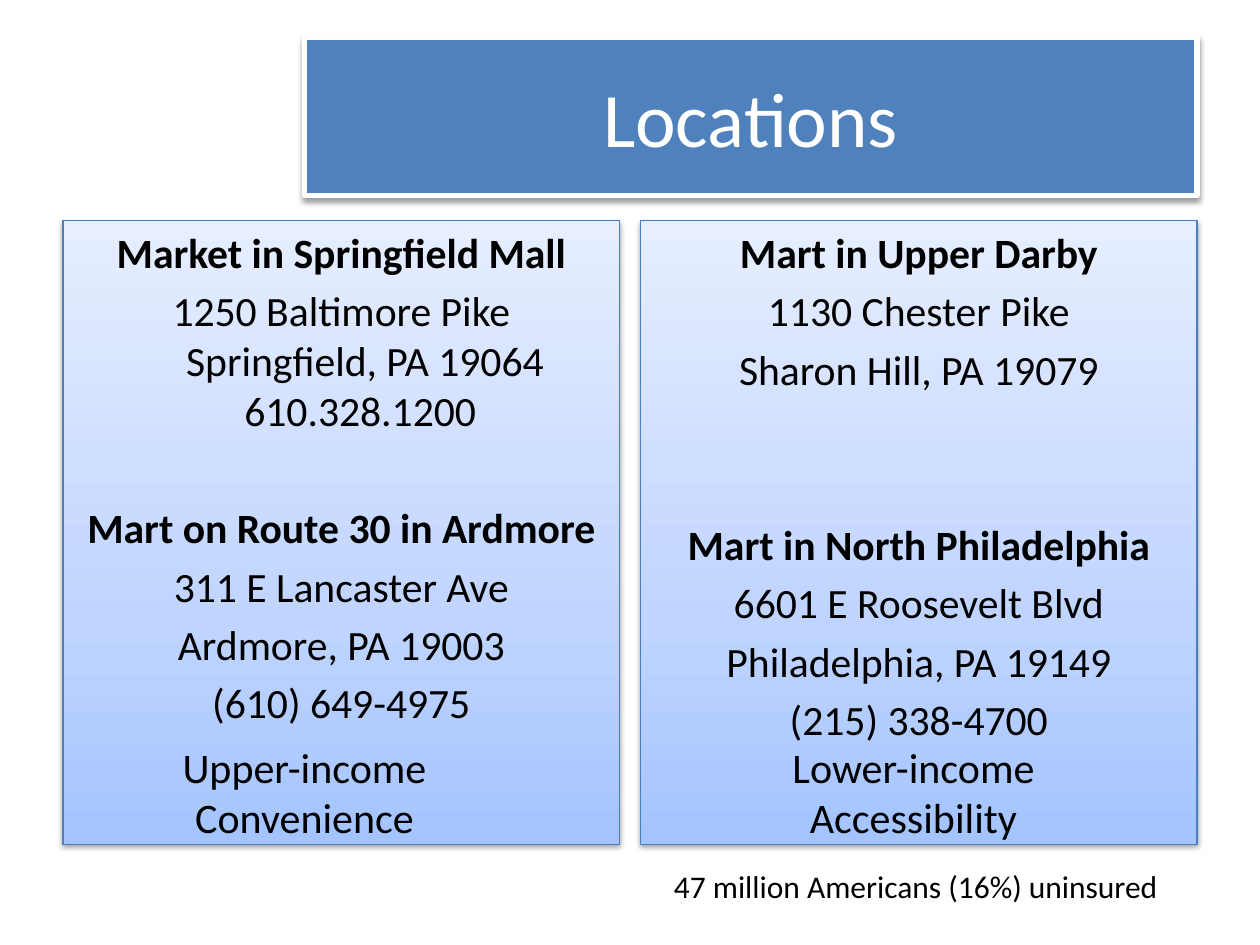
from copy import deepcopy

from lxml import etree
from pptx import Presentation
from pptx.dml.color import RGBColor
from pptx.enum.text import MSO_ANCHOR, MSO_AUTO_SIZE, PP_ALIGN
from pptx.oxml.ns import qn
from pptx.util import Pt

CENTER, LEFT = PP_ALIGN.CENTER, PP_ALIGN.LEFT
TWO_CONTENT = 3
FONT = "Calibri"
BLACK, WHITE, BLUE, EDGE = "000000", "FFFFFF", "4F81BD", "4B7EBC"
PANEL_STOPS = [(0, "A4C4FF"), (0.35, "BFD4FF"), (1, "E6EEFF")]

# Content: each location is a heading and its address paragraphs
TITLE = "Locations"
COLUMNS = [
    {
        "locations": [
            ("Market in Springfield Mall",
             ["1250 Baltimore Pike\vSpringfield, PA 19064\v610.328.1200 "]),
            ("Mart on Route 30 in Ardmore",
             ["311 E Lancaster Ave", "Ardmore, PA 19003", "(610) 649-4975"]),
        ],
        "gap": 38.2,
        "audience": ["Upper-income", "Convenience"],
        "audience_left": 60,
    },
    {
        "locations": [
            ("Mart in Upper Darby",
             ["1130 Chester Pike", "Sharon Hill, PA 19079"]),
            ("Mart in North Philadelphia",
             ["6601 E Roosevelt Blvd", "Philadelphia, PA 19149", "(215) 338-4700"]),
        ],
        "gap": 71.6,
        "audience": ["Lower-income", "Accessibility"],
        "audience_left": 408,
    },
]
FOOTNOTE = "47 million Americans (16%) uninsured"

# Layout in points
PANEL_LEFT, PANEL_TOP, PANEL_WIDTH, PANEL_HEIGHT = 36, 126, 318, 356.4
PANEL_STEP = 330
LINE_GAP = 4.8
HANGING = 27


def rgb(color):
    return RGBColor.from_string(color)


def place(shape, left, top, width, height):
    shape.left, shape.top = Pt(left), Pt(top)
    shape.width, shape.height = Pt(width), Pt(height)


def style(paragraph, size, color=BLACK, bold=False, align=CENTER):
    paragraph.alignment = align
    for run in paragraph.runs:
        font = run.font
        font.name, font.size, font.bold = FONT, Pt(size), bold
        font.color.rgb = rgb(color)
    # Line breaks keep the size of their text
    for line_break in paragraph._p.findall(qn("a:br")):
        line_break.append(deepcopy(paragraph.runs[0]._r.rPr))


def outline(shape, color, width):
    shape.line.color.rgb = rgb(color)
    shape.line.width = Pt(width)


def add_shadow(shape):
    effects = etree.SubElement(shape._element.spPr, qn("a:effectLst"))
    shadow = etree.SubElement(
        effects, qn("a:outerShdw"), blurRad=str(Pt(3.1)), dist=str(Pt(1.6)),
        dir="5400000", rotWithShape="0")
    color = etree.SubElement(shadow, qn("a:srgbClr"), val=BLACK)
    etree.SubElement(color, qn("a:alpha"), val="38000")


def fill_gradient(shape):
    shape.fill.gradient()
    shape.fill.gradient_angle = 90
    stop_list = shape._element.spPr.find(".//" + qn("a:gsLst"))
    stop_list.append(deepcopy(stop_list[0]))
    for stop, (position, color) in zip(shape.fill.gradient_stops, PANEL_STOPS):
        stop.position = position
        stop.color.rgb = rgb(color)


def hang_without_bullet(paragraph):
    properties = paragraph._p.get_or_add_pPr()
    properties.set("marL", str(Pt(HANGING)))
    properties.set("indent", str(-Pt(HANGING)))
    etree.SubElement(properties, qn("a:buNone"))


def fill_panel(panel, column):
    frame = panel.text_frame
    frame.auto_size = MSO_AUTO_SIZE.NONE
    lines = []
    for number, (heading, address) in enumerate(column["locations"]):
        lines.append((heading, True, column["gap"] if number else 0))
        lines += [(text, False, LINE_GAP) for text in address]
    for number, (text, bold, space) in enumerate(lines):
        paragraph = frame.add_paragraph() if number else frame.paragraphs[0]
        paragraph.text = text
        paragraph.space_before = Pt(space)
        hang_without_bullet(paragraph)
        style(paragraph, 23.8, bold=bold)


def add_note(slide, text, size, left, top, width, height, align=CENTER):
    note = slide.shapes.add_textbox(Pt(left), Pt(top), Pt(width), Pt(height))
    note.text_frame.word_wrap = True
    note.text_frame.text = text
    for paragraph in note.text_frame.paragraphs:
        style(paragraph, size, align=align)


def main():
    deck = Presentation()
    deck.slide_width, deck.slide_height = Pt(720), Pt(540)
    slide = deck.slides.add_slide(deck.slide_layouts[TWO_CONTENT])

    # Title banner
    title = slide.shapes.title
    place(title, 174, 21.6, 510, 90)
    title.text_frame.text = TITLE
    title.text_frame.vertical_anchor = MSO_ANCHOR.MIDDLE
    style(title.text_frame.paragraphs[0], 44, WHITE)
    title.fill.solid()
    title.fill.fore_color.rgb = rgb(BLUE)
    outline(title, WHITE, 3)
    add_shadow(title)

    # Location panels
    for number, column in enumerate(COLUMNS):
        panel = slide.placeholders[number + 1]
        place(panel, PANEL_LEFT + number * PANEL_STEP, PANEL_TOP,
              PANEL_WIDTH, PANEL_HEIGHT)
        fill_gradient(panel)
        outline(panel, EDGE, 0.75)
        add_shadow(panel)
        fill_panel(panel, column)

    # Audience captions and footnote
    for column in COLUMNS:
        add_note(slide, "\n".join(column["audience"]), 24,
                 column["audience_left"], 420, 228, 65.4)
    add_note(slide, FOOTNOTE, 18, 378, 492, 300, 29, LEFT)

    deck.save("out.pptx")


if __name__ == "__main__":
    main()
